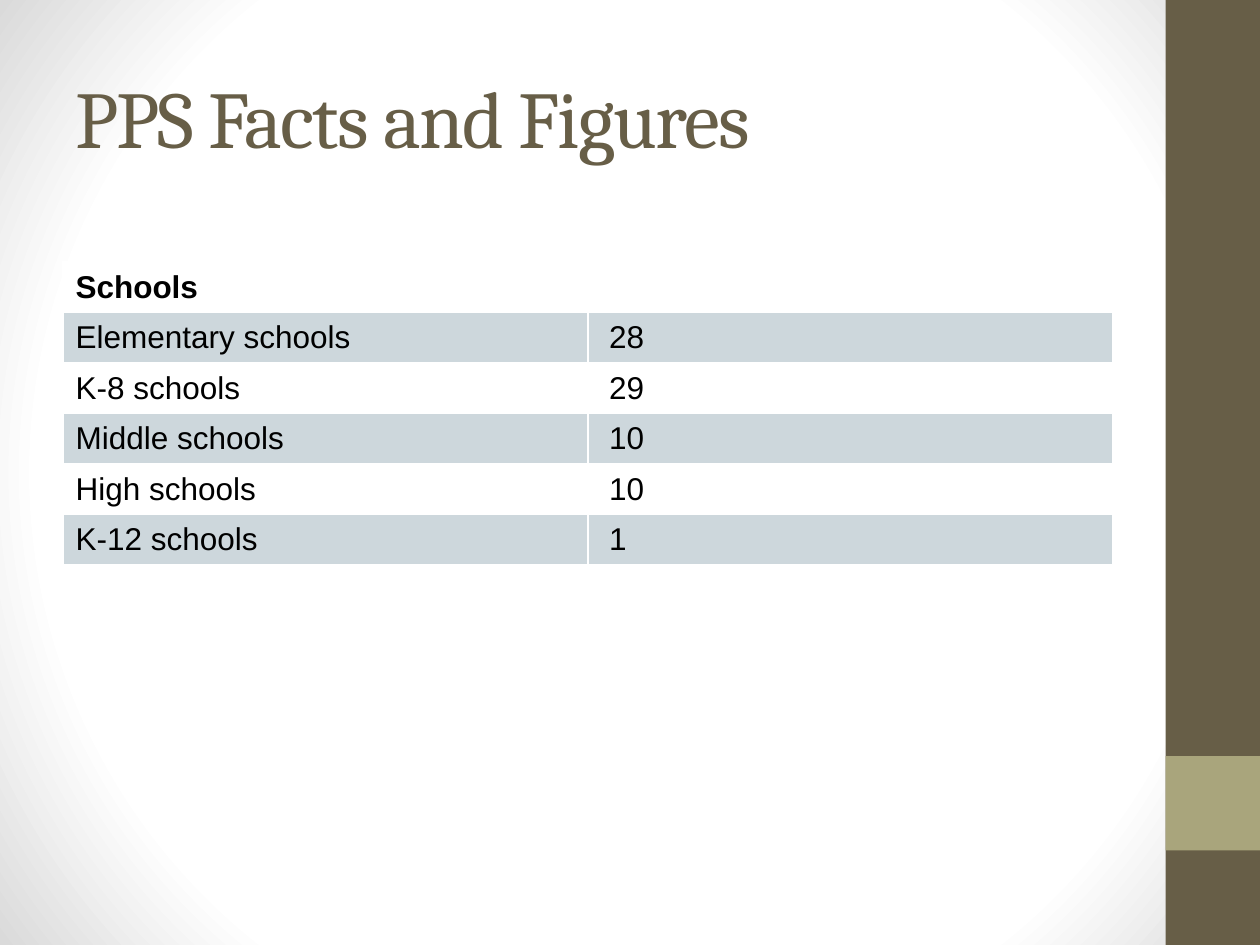
from lxml import etree
from pptx import Presentation, util as u
from pptx.dml.color import RGBColor
from pptx.enum import shapes, text
from pptx.oxml import ns

TITLE = "PPS Facts and Figures"
HEADING = "Schools"
SCHOOLS = [
    ("Elementary schools", 28),
    ("K-8 schools", 29),
    ("Middle schools", 10),
    ("High schools", 10),
    ("K-12 schools", 1),
]
COLORS = {"brown": "675E47", "sage": "A9A57C", "band": "CDD7DC",
          "white": "FFFFFF", "edge": "DADADA", "ink": "000000"}
TITLE_FONT = {"name": "Cambria", "size": u.Pt(46), "bold": False}
BODY_FONT = {"name": "Arial", "size": u.Pt(18), "bold": False}
BACKGROUND_STOPS = [(0, "white"), (75, "white"), (100, "edge")]

W, H = u.Inches(10), u.Inches(7.5)
LEFT, CONTENT_W = u.Inches(0.5), u.Inches(8.33)
SIDEBAR_W = int(W * 0.075)
TABLE_TOP, ROW_H = u.Inches(2.08), u.Inches(0.38)
NUMBER_INDENT = u.Inches(0.17)


def rgb(name):
    return RGBColor.from_string(COLORS[name])


def write(tf, words, font, color):
    r = tf.paragraphs[0].add_run()
    r.text = words
    for key, value in font.items():
        setattr(r.font, key, value)
    r.font.color.rgb = rgb(color)
    return r


def paint_background(s):
    """Radial gradient, white in the middle and grey at the corners."""
    fill = s.background.fill
    fill.gradient()
    grad = s.element.find(".//" + ns.qn("a:gradFill"))
    for child in list(grad):
        grad.remove(child)
    stops = etree.SubElement(grad, ns.qn("a:gsLst"))
    for percent, color in BACKGROUND_STOPS:
        stop = etree.SubElement(stops, ns.qn("a:gs"), pos=str(percent * 1000))
        etree.SubElement(stop, ns.qn("a:srgbClr"), val=COLORS[color])
    circle = etree.SubElement(grad, ns.qn("a:path"), path="circle")
    etree.SubElement(circle, ns.qn("a:fillToRect"),
                     dict.fromkeys("ltrb", "50000"))


def add_block(s, top, height, color):
    sp = s.shapes.add_shape(shapes.MSO_SHAPE.RECTANGLE,
                            W - SIDEBAR_W, top, SIDEBAR_W, height)
    sp.shadow.inherit = False
    sp.fill.solid()
    sp.fill.fore_color.rgb = rgb(color)
    sp.line.fill.background()


def add_title(s):
    tf = s.shapes.add_textbox(LEFT, u.Inches(0.3), CONTENT_W,
                              u.Inches(1.25)).text_frame
    tf.word_wrap = True
    tf.vertical_anchor = text.MSO_ANCHOR.MIDDLE
    r = write(tf, TITLE, TITLE_FONT, "brown")
    r.font._element.set("spc", "-100")


def add_schools(s):
    rows = [(HEADING, "")] + SCHOOLS
    table = s.shapes.add_table(len(rows), 2, LEFT, TABLE_TOP,
                               CONTENT_W, ROW_H * len(rows)).table
    for i, values in enumerate(rows):
        table.rows[i].height = ROW_H
        for j, value in enumerate(values):
            cell = table.cell(i, j)
            cell.fill.solid()
            cell.fill.fore_color.rgb = rgb("band" if i % 2 else "white")
            cell.vertical_anchor = text.MSO_ANCHOR.MIDDLE
            if j:
                cell.margin_left = NUMBER_INDENT
            if value != "":
                write(cell.text_frame, str(value),
                      {**BODY_FONT, "bold": i == 0}, "ink")
    table.cell(0, 0).merge(table.cell(0, 1))


def main():
    prs = Presentation()
    prs.slide_width, prs.slide_height = W, H
    s = prs.slides.add_slide(prs.slide_layouts[6])
    paint_background(s)
    add_block(s, 0, H, "brown")
    add_block(s, int(H * 0.8), int(H * 0.1), "sage")
    add_title(s)
    add_schools(s)
    prs.save("out.pptx")


if __name__ == "__main__":
    main()
